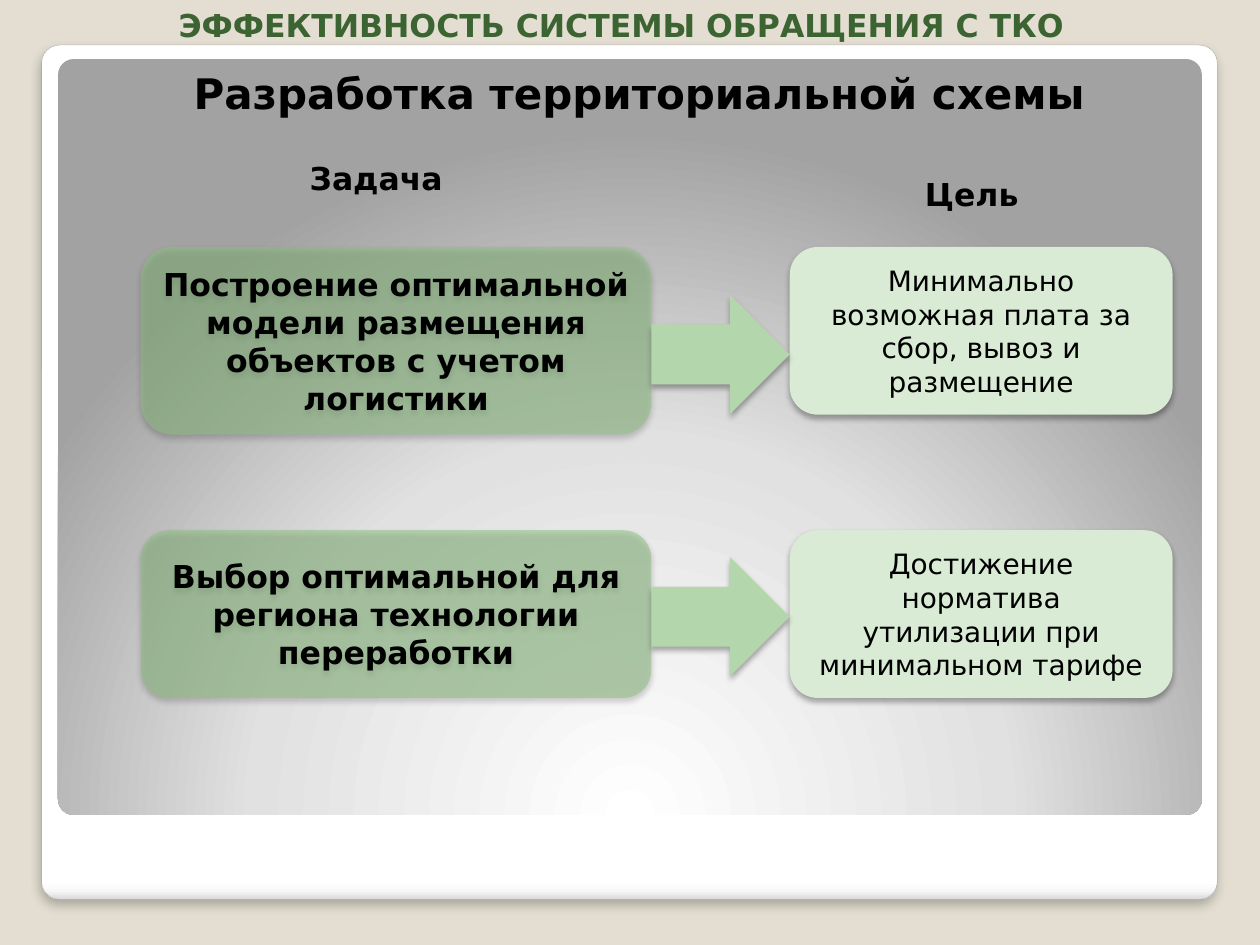
from lxml.etree import SubElement
from pptx import Presentation
from pptx.dml.color import RGBColor
from pptx.enum.shapes import MSO_SHAPE as Shape
from pptx.enum.text import MSO_ANCHOR as Anchor, MSO_AUTO_SIZE as AutoSize, PP_ALIGN as Align
from pptx.oxml import parse_xml
from pptx.oxml.ns import nsdecls, qn
from pptx.util import Cm, Pt

COLORS = {
    "background": "E3DED1", "heading": "3B6432", "text": "000000",
    "task": "8EC182", "goal": "D9EAD5", "arrow": "B3D6AC", "frame_line": "A4A4A4",
}
FONT = "DejaVu Sans"


def write(frame, text, size, bold=True, color="text", anchor=Anchor.MIDDLE):
    frame.text = text
    frame.word_wrap = True
    frame.auto_size = AutoSize.NONE
    frame.vertical_anchor = anchor
    paragraph = frame.paragraphs[0]
    paragraph.alignment = Align.CENTER
    font = paragraph.runs[0].font
    font.name, font.size, font.bold = FONT, Pt(size), bold
    font.color.rgb = RGBColor.from_string(COLORS[color])


def add_block(kind, left, top, width, height, color, shadow=(32, 3.5, 2.2)):
    """Add a borderless shape; shadow is opacity in percent, blur and distance in points."""
    block = slide.shapes.add_shape(kind, Cm(left), Cm(top), Cm(width), Cm(height))
    block.fill.solid()
    block.fill.fore_color.rgb = RGBColor.from_string(COLORS[color])
    block.line.fill.background()
    block.shadow.inherit = False
    if shadow:
        opacity, blur, distance = shadow
        effects = block._element.spPr.find(qn("a:effectLst"))
        outer = SubElement(effects, qn("a:outerShdw"), blurRad=str(Pt(blur)),
                           dist=str(Pt(distance)), dir="5400000", rotWithShape="0")
        tint = SubElement(outer, qn("a:srgbClr"), val="000000")
        SubElement(tint, qn("a:alpha"), val=str(opacity * 1000))
    return block


prs = Presentation()
prs.slide_width, prs.slide_height = Cm(25.4), Cm(19.05)
slide = prs.slides.add_slide(prs.slide_layouts[1])
slide.background.fill.solid()
slide.background.fill.fore_color.rgb = RGBColor.from_string(COLORS["background"])

# White frame and grey panel with their gradients
frame = add_block(Shape.ROUNDED_RECTANGLE, 0.84, 0.91, 23.7, 17.22, "background", (25, 6, 4))
frame.line.color.rgb = RGBColor.from_string(COLORS["frame_line"])
frame.line.width = Pt(0.16)
panel = add_block(Shape.ROUNDED_RECTANGLE, 1.17, 1.19, 23.06, 15.24, "background", None)
gradients = [
    (frame, [(0, "FFFFFF"), (98, "FFFFFF"), (99, "F7F7F7"), (100, "DADADA")],
     '<a:lin ang="5400000" scaled="0"/>'),
    (panel, [(0, "FFFFFF"), (55, "E1E1E1"), (100, "A2A2A2")],
     '<a:path path="circle"><a:fillToRect l="50000" t="175000" r="50000" b="-75000"/></a:path>'),
]
for surface, stops, direction in gradients:
    surface.adjustments[0] = 0.021
    stop_list = "".join(
        f'<a:gs pos="{position * 1000}"><a:srgbClr val="{color}"/></a:gs>' for position, color in stops)
    properties = surface._element.spPr
    properties.replace(properties.find(qn("a:solidFill")), parse_xml(
        f'<a:gradFill {nsdecls("a")} rotWithShape="1"><a:gsLst>{stop_list}</a:gsLst>{direction}</a:gradFill>'))

# Heading and topic, brought in front of the panels
heading, topic = slide.shapes.title, slide.placeholders[1]
for placeholder, left, top, width, height in [
    (heading, 1.4, 0, 22.25, 1.02),
    (topic, 1.4, 1.12, 22.73, 1.37),
]:
    slide.shapes._spTree.append(placeholder._element)
    placeholder.left, placeholder.top = Cm(left), Cm(top)
    placeholder.width, placeholder.height = Cm(width), Cm(height)
write(heading.text_frame, "ЭФФЕКТИВНОСТЬ СИСТЕМЫ ОБРАЩЕНИЯ С ТКО", 18, color="heading", anchor=Anchor.TOP)
write(topic.text_frame, "Разработка территориальной схемы", 24, anchor=Anchor.TOP)
topic.text_frame.margin_left, topic.text_frame.margin_top = Cm(0.5), Cm(0.25)
topic_paragraph = topic.text_frame.paragraphs[0]
topic_paragraph.space_before = Pt(2.5)
topic_format = topic_paragraph._p.get_or_add_pPr()
topic_format.set("marL", "0")
topic_format.set("indent", "0")
SubElement(topic_format, qn("a:buNone"))

# Column labels
for label, left, top, width in [("Задача", 3.89, 2.84, 7.39), ("Цель", 15.92, 3.15, 7.34)]:
    column_label = slide.shapes.add_textbox(Cm(left), Cm(top), Cm(width), Cm(1.5))
    write(column_label.text_frame, label, 18)

# Each task leads to its goal
TASK_LEFT, TASK_WIDTH = 2.84, 10.29
GOAL_LEFT, GOAL_WIDTH, GOAL_HEIGHT = 15.92, 7.72, 3.38
ARROW_LEFT = TASK_LEFT + TASK_WIDTH
rows = [
    (4.98, 3.78, 5.94, "Построение оптимальной модели размещения объектов с учетом логистики",
     "Минимально возможная плата за сбор, вывоз и размещение"),
    (10.69, 3.38, 11.23, "Выбор оптимальной для региона технологии переработки",
     "Достижение норматива утилизации при минимальном тарифе"),
]
for top, task_height, arrow_top, task_text, goal_text in rows:
    task = add_block(Shape.ROUNDED_RECTANGLE, TASK_LEFT, top, TASK_WIDTH, task_height, "task")
    task_color = task._element.spPr.find(qn("a:solidFill")).find(qn("a:srgbClr"))
    SubElement(task_color, qn("a:alpha"), val="52000")
    write(task.text_frame, task_text, 18)
    goal = add_block(Shape.ROUNDED_RECTANGLE, GOAL_LEFT, top, GOAL_WIDTH, GOAL_HEIGHT, "goal")
    write(goal.text_frame, goal_text, 16, bold=False)
    add_block(Shape.RIGHT_ARROW, ARROW_LEFT, arrow_top, GOAL_LEFT - ARROW_LEFT, 2.41, "arrow")

prs.save("out.pptx")
